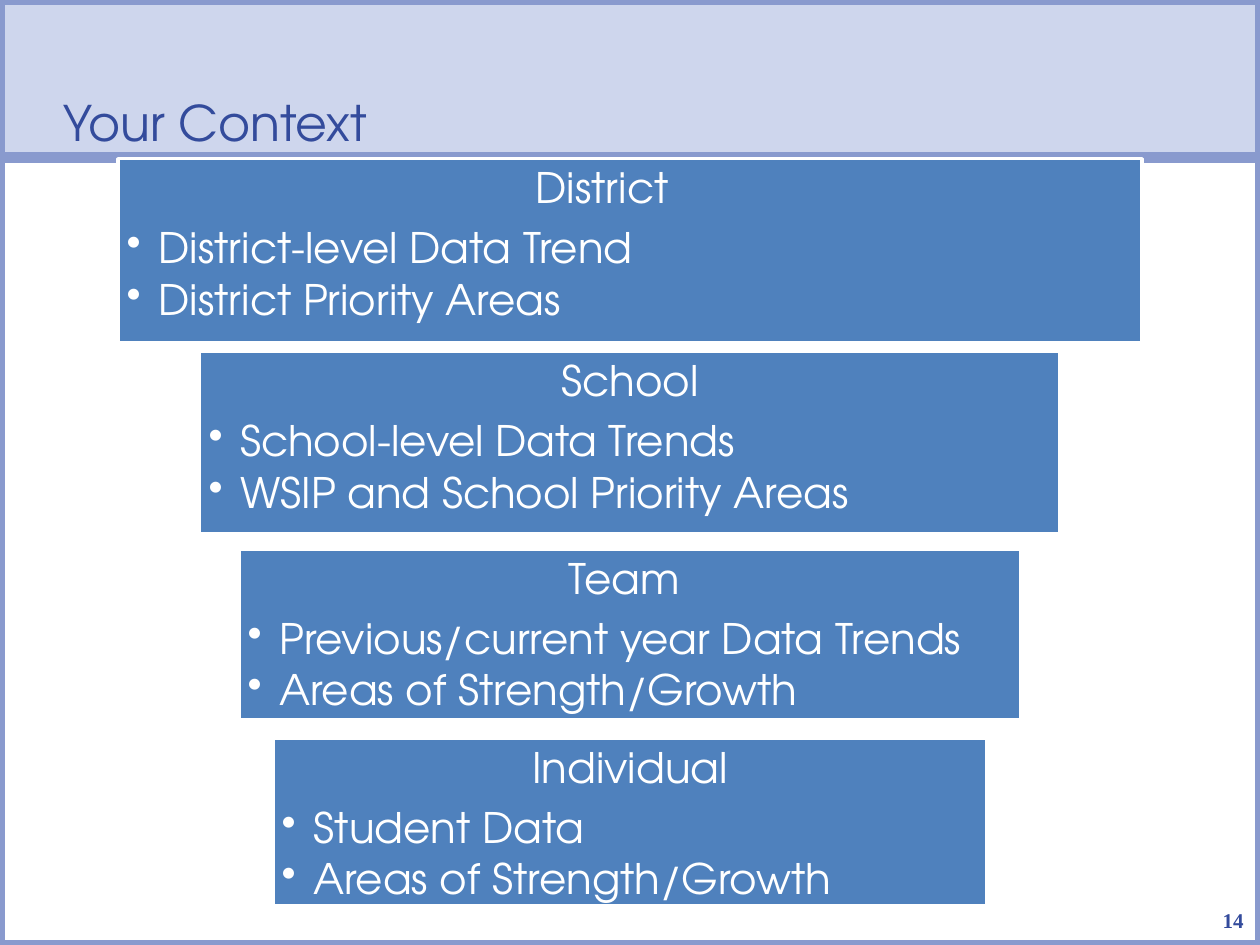
from dataclasses import dataclass

from lxml.etree import SubElement
from pptx import Presentation
from pptx.dml.color import RGBColor
from pptx.enum.shapes import MSO_SHAPE
from pptx.enum.text import MSO_ANCHOR, MSO_AUTO_SIZE, PP_ALIGN
from pptx.oxml.ns import qn
from pptx.util import Cm, Pt


@dataclass(frozen=True)
class Theme:
    """Colours, fonts and type sizes of the slide."""
    ink: str = "334B9C"
    band: str = "CED6ED"
    frame: str = "899ACE"
    panel: str = "4F81BD"
    white: str = "FFFFFF"
    font: str = "TeX Gyre Adventor"
    number_font: str = "Times New Roman"
    title_size: int = 28
    panel_size: int = 24
    number_size: int = 12


class SlideBuilder:
    """Holds the theme and the current slide and adds styled elements."""

    def __init__(self, slide, theme):
        """Keep the slide and its theme."""
        self.slide = slide
        self.theme = theme

    def outline(self, shape, fill, line, width):
        """Set the fill and line of a shape."""
        if fill:
            shape.fill.solid()
            shape.fill.fore_color.rgb = RGBColor.from_string(fill)
        else:
            shape.fill.background()
        shape.line.color.rgb = RGBColor.from_string(line)
        shape.line.width = Pt(width)

    def place(self, shape, left, top, width, height):
        """Move and size a shape in centimetres."""
        shape.left, shape.top = Cm(left), Cm(top)
        shape.width, shape.height = Cm(width), Cm(height)

    def text_frame(self, shape, anchor, margins):
        """Prepare the text frame of a shape."""
        frame = shape.text_frame
        frame.word_wrap = True
        frame.auto_size = MSO_AUTO_SIZE.NONE
        frame.vertical_anchor = anchor
        (frame.margin_left, frame.margin_top,
         frame.margin_right, frame.margin_bottom) = map(Cm, margins)
        return frame

    def add_span(self, para, text, size, color, font, align, bold=False):
        """Add one formatted run to a paragraph."""
        para.alignment = align
        span = para.add_run()
        span.text = text
        span.font.size = Pt(size)
        span.font.name = font
        span.font.bold = bold
        span.font.color.rgb = RGBColor.from_string(color)

    def indent(self, para, left, first):
        """Set the left and first-line indents and return the properties."""
        properties = para._p.get_or_add_pPr()
        properties.set("marL", str(Cm(left)))
        properties.set("indent", str(Cm(first)))
        return properties

    def rectangle(self, left, top, width, height, fill, line, line_width):
        """Add a plain rectangle."""
        box = self.slide.shapes.add_shape(
            MSO_SHAPE.RECTANGLE, Cm(left), Cm(top), Cm(width), Cm(height))
        box.shadow.inherit = False
        self.outline(box, fill, line, line_width)
        return box

    def title(self, text, width, height):
        """Fill the title placeholder as a band across the top."""
        theme = self.theme
        title = self.slide.shapes.title
        self.place(title, 0, 0, width, height)
        self.outline(title, theme.band, theme.frame, 6)
        frame = self.text_frame(title, MSO_ANCHOR.BOTTOM, (0, 0, 1.27, 0.13))
        para = frame.paragraphs[0]
        para.line_spacing = Pt(26)
        self.indent(para, 1.27, 0)
        self.add_span(para, text, theme.title_size, theme.ink, theme.font, PP_ALIGN.LEFT)

    def page_number(self, text):
        """Add the page number at the lower right."""
        theme = self.theme
        box = self.slide.shapes.add_textbox(Cm(24.38), Cm(17.78), Cm(0.69), Cm(1.02))
        frame = self.text_frame(box, MSO_ANCHOR.BOTTOM, (0, 0, 0, 0))
        self.add_span(frame.paragraphs[0], text, theme.number_size, theme.ink,
                      theme.number_font, PP_ALIGN.RIGHT, bold=True)

    def panel(self, center, top, width, height, heading, items):
        """Add a centred panel with a heading and a bulleted list."""
        theme = self.theme
        box = self.rectangle(center - width / 2, top, width, height,
                             theme.panel, theme.white, 2)
        frame = self.text_frame(box, MSO_ANCHOR.TOP, (0.18,) * 4)
        style = (theme.panel_size, theme.white, theme.font)
        para = frame.paragraphs[0]
        para.line_spacing = 0.9
        para.space_after = Pt(0.35 * theme.panel_size)
        self.add_span(para, heading, *style, PP_ALIGN.CENTER)
        for item in items:
            para = frame.add_paragraph()
            para.level = 1
            para.line_spacing = 0.9
            para.space_after = Pt(0.15 * theme.panel_size)
            properties = self.indent(para, 0.64, -0.64)
            SubElement(properties, qn("a:buChar")).set("char", "•")
            self.add_span(para, item, *style, PP_ALIGN.LEFT)


PANELS = [
    (3.2, 20.65, 3.71, "District\t",
     ["District-level Data Trend", "District Priority Areas"]),
    (7.09, 17.35, 3.68, "School",
     ["School-level Data Trends", "WSIP and School Priority Areas"]),
    (11.07, 15.77, 3.45, "Team ",
     ["Previous/current year Data Trends", "Areas of Strength/Growth"]),
    (14.88, 14.4, 3.38, "Individual",
     ["Student Data", "Areas of Strength/Growth"]),
]


def main():
    """Build and save the slide."""
    width, height, band_height = 25.4, 19.05, 3.18
    deck = Presentation()
    deck.slide_width, deck.slide_height = Cm(width), Cm(height)
    page = deck.slides.add_slide(deck.slide_layouts[5])
    theme = Theme()
    builder = SlideBuilder(page, theme)
    builder.title("Your Context", width, band_height)
    builder.rectangle(0, band_height, width, height - band_height, None, theme.frame, 6)
    builder.page_number("14")
    for top, panel_width, panel_height, heading, items in PANELS:
        builder.panel(width / 2, top, panel_width, panel_height, heading, items)
    deck.save("out.pptx")


if __name__ == "__main__":
    main()
